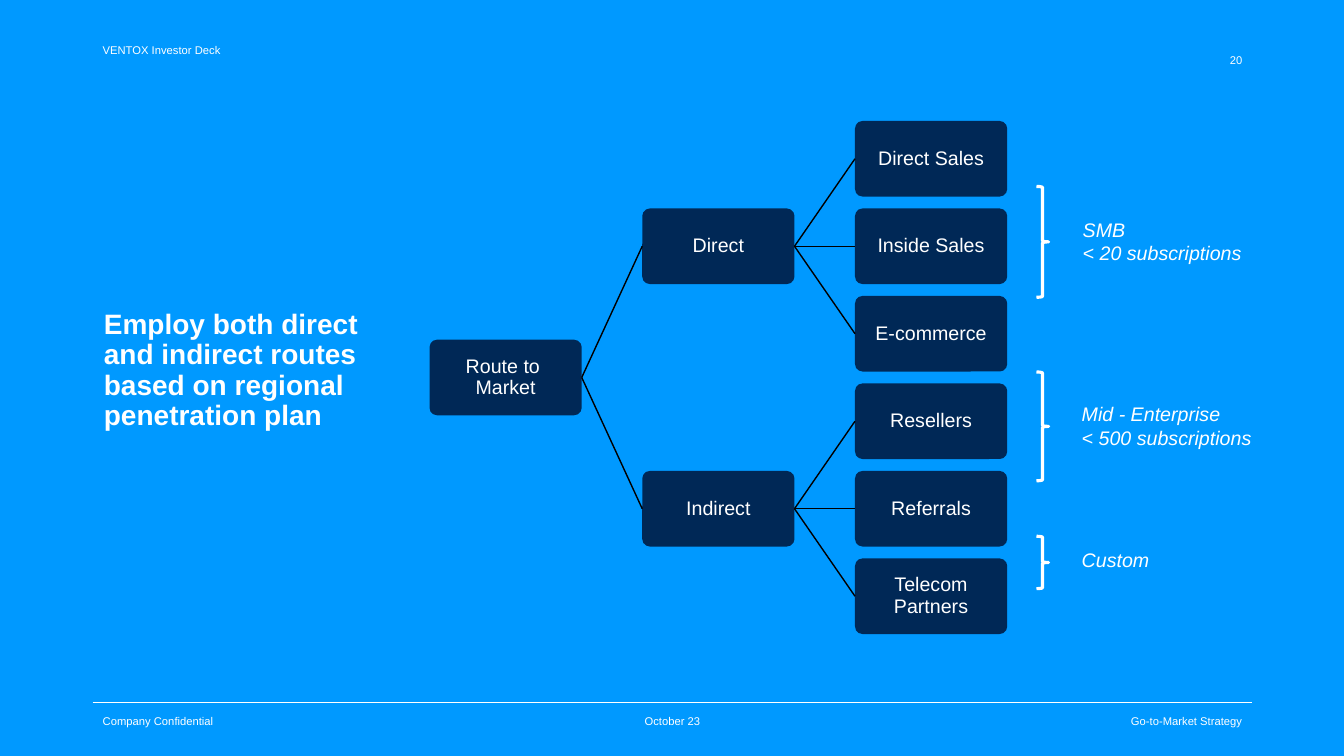
from lxml import etree
from pptx import Presentation
from pptx.dml.color import RGBColor
from pptx.enum.shapes import MSO_CONNECTOR, MSO_SHAPE
from pptx.enum.text import MSO_ANCHOR, MSO_AUTO_SIZE, PP_ALIGN
from pptx.oxml.ns import qn
from pptx.util import Inches, Pt

LEFT, CENTER, RIGHT = PP_ALIGN.LEFT, PP_ALIGN.CENTER, PP_ALIGN.RIGHT
TOP, MIDDLE = MSO_ANCHOR.TOP, MSO_ANCHOR.MIDDLE

# Content
TITLE = "Employ both direct and indirect routes based on regional penetration plan"
ROOT = "Route to \vMarket"
ROUTES = {
    "Direct": ["Direct Sales", "Inside Sales", "E-commerce"],
    "Indirect": ["Resellers", "Referrals", "Telecom\vPartners"],
}
# brace top, brace height, label left, label top, label lines
SEGMENTS = [
    (1.85, 1.10, 10.64, 2.11, ["SMB", "< 20 subscriptions"]),
    (3.69, 1.08, 10.63, 3.94, ["Mid - Enterprise", "< 500 subscriptions"]),
    (5.32, 0.52, 10.63, 5.39, ["Custom"]),
]
# text, left, top, width, alignment, anchor, space before
MARGINALIA = [
    ("VENTOX Investor Deck", 0.92, 0.40, 2.66, LEFT, TOP, 10),
    ("20", 9.42, 0.40, 3.00, RIGHT, MIDDLE, 0),
    ("Company Confidential", 0.92, 6.95, 1.88, LEFT, MIDDLE, 0),
    ("October 23", 5.17, 6.95, 3.00, CENTER, MIDDLE, 0),
    ("Go-to-Market Strategy", 9.07, 6.95, 3.35, RIGHT, MIDDLE, 0),
]

COLORS = {"background": "0099FF", "box": "002856", "text": "FFFFFF", "branch": "000000"}
FONT = "Arial"

# Tree grid, in inches
TREE_LEFT, COLUMN_STEP = 4.26, 2.11
FIRST_LEAF_TOP, LAST_LEAF_TOP = 1.2, 5.54
BOX_WIDTH, BOX_HEIGHT = 1.51, 0.75
BRACE_LEFT, BRACE_WIDTH = 10.28, 0.12
RIGHT_SITE, LEFT_SITE = 3, 1


def color(name):
    return RGBColor.from_string(COLORS[name])


def write(shape, lines, *, size, align=LEFT, anchor=TOP, bold=False, italic=False,
          spacing=1.0, before=0, inset=None):
    frame = shape.text_frame
    frame.word_wrap = True
    frame.auto_size = MSO_AUTO_SIZE.NONE
    frame.vertical_anchor = anchor
    if inset is not None:
        frame.margin_left = frame.margin_right = Inches(inset)
        frame.margin_top = frame.margin_bottom = Inches(inset)
    frame.text = "\n".join(lines)
    for para in frame.paragraphs:
        para.alignment = align
        para.line_spacing = spacing
        para.space_before = Pt(before)
        for span in para.runs:
            font = span.font
            font.name, font.size, font.bold, font.italic = FONT, Pt(size), bold, italic
            font.color.rgb = color("text")
        for line_break in para._p.findall(qn("a:br")):
            etree.SubElement(line_break, qn("a:rPr")).set("sz", str(size * 100))


def add_text(page, lines, left, top, width, height, **style):
    box = page.shapes.add_textbox(Inches(left), Inches(top), Inches(width), Inches(height))
    write(box, lines, **style)


def add_line(page, start, end, line_color, weight):
    line = page.shapes.add_connector(
        MSO_CONNECTOR.STRAIGHT, *(Inches(value) for value in (*start, *end)))
    line.line.color.rgb = color(line_color)
    line.line.width = Pt(weight)
    etree.SubElement(line._element.spPr, qn("a:effectLst"))
    return line


def add_node(page, label, column, top):
    node = page.shapes.add_shape(
        MSO_SHAPE.ROUNDED_RECTANGLE, Inches(TREE_LEFT + column * COLUMN_STEP), Inches(top),
        Inches(BOX_WIDTH), Inches(BOX_HEIGHT))
    node.adjustments[0] = 0.1
    node.shadow.inherit = False
    node.fill.solid()
    node.fill.fore_color.rgb = color("box")
    node.line.fill.background()
    write(node, [label], size=14, align=CENTER, anchor=MIDDLE, spacing=0.9, inset=0.03)
    return node


def add_branches(page, parent, children):
    for child in children:
        branch = add_line(page, (0, 0), (1, 1), "branch", 1)
        branch.begin_connect(parent, RIGHT_SITE)
        branch.end_connect(child, LEFT_SITE)


def add_tree(page):
    """Space the leaves evenly and centre each parent on its children."""
    leaf_count = sum(len(leaves) for leaves in ROUTES.values())
    step = (LAST_LEAF_TOP - FIRST_LEAF_TOP) / (leaf_count - 1)
    row, route_nodes = 0, []
    for route, leaves in ROUTES.items():
        tops = [FIRST_LEAF_TOP + (row + index) * step for index in range(len(leaves))]
        row += len(leaves)
        route_node = add_node(page, route, 1, sum(tops) / len(tops))
        leaf_nodes = [add_node(page, leaf, 2, top) for leaf, top in zip(leaves, tops)]
        add_branches(page, route_node, leaf_nodes)
        route_nodes.append(route_node)
    root_node = add_node(page, ROOT, 0, (FIRST_LEAF_TOP + LAST_LEAF_TOP) / 2)
    add_branches(page, root_node, route_nodes)


def add_segment(page, brace_top, brace_height, label_left, label_top, lines):
    brace = page.shapes.add_shape(
        MSO_SHAPE.RIGHT_BRACE, Inches(BRACE_LEFT), Inches(brace_top),
        Inches(BRACE_WIDTH), Inches(brace_height))
    brace.shadow.inherit = False
    brace.fill.background()
    brace.line.color.rgb = color("text")
    brace.line.width = Pt(2.25)
    add_text(page, lines, label_left, label_top, 2.29, 0.11 + 0.23 * len(lines),
             size=14, italic=True)


def main():
    deck = Presentation()
    deck.slide_width, deck.slide_height = Inches(13.33), Inches(7.5)
    page = deck.slides.add_slide(deck.slide_layouts.get_by_name("Title Only"))
    page.background.fill.solid()
    page.background.fill.fore_color.rgb = color("background")

    title = page.shapes.title
    title.left, title.top = Inches(0.93), Inches(3.03)
    title.width, title.height = Inches(3.1), Inches(1.43)
    write(title, [TITLE], size=20, bold=True, spacing=0.9)

    add_line(page, (0.92, 6.97), (12.42, 6.97), "text", 0.5)
    for text, left, top, width, align, anchor, before in MARGINALIA:
        add_text(page, [text], left, top, width, 0.4, size=8, align=align, anchor=anchor,
                 before=before, spacing=0.9 if before else 1.0)
    add_tree(page)
    for segment in SEGMENTS:
        add_segment(page, *segment)
    deck.save("out.pptx")


if __name__ == "__main__":
    main()
